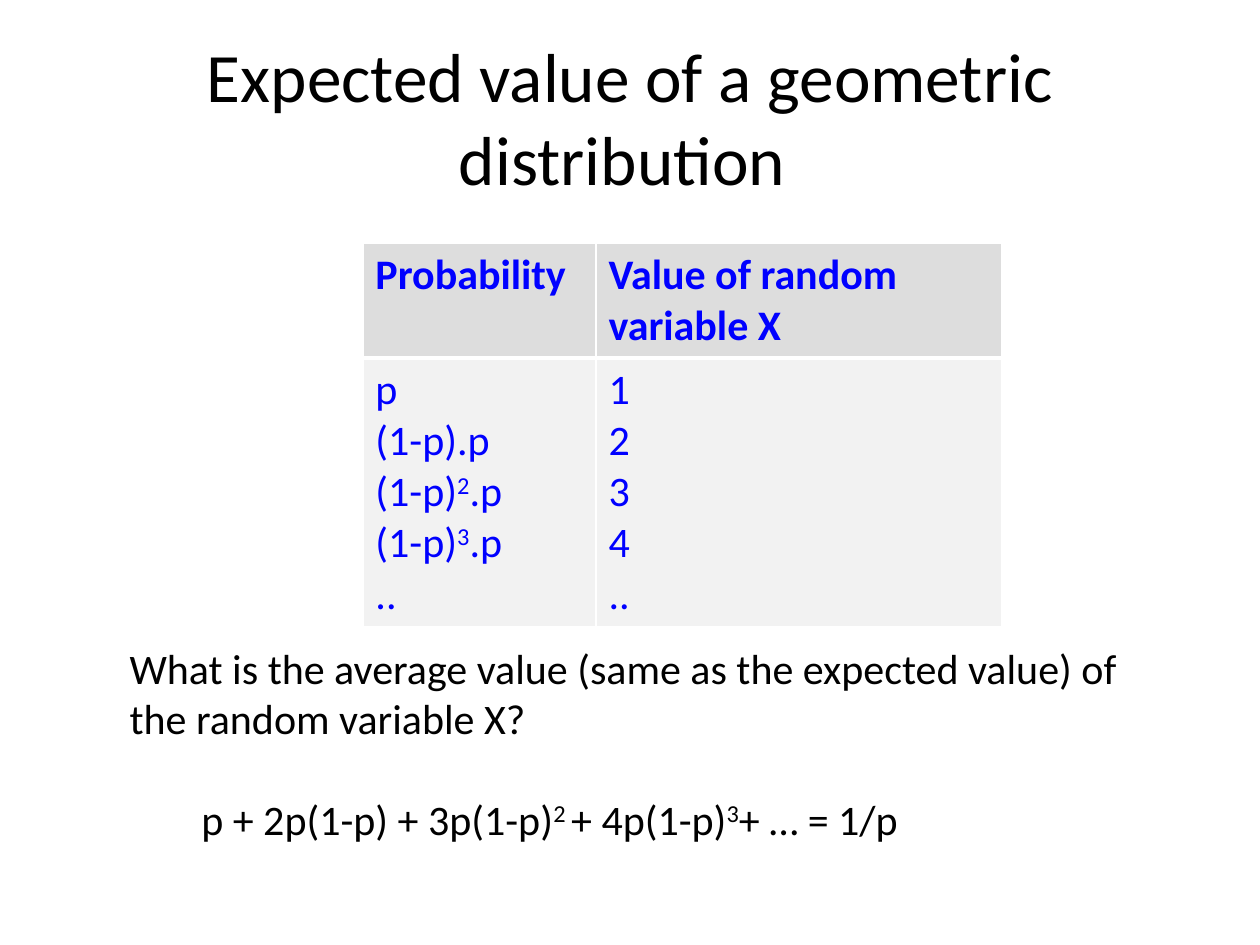
from dataclasses import dataclass
from typing import NamedTuple

from lxml.etree import SubElement
from pptx import Presentation
from pptx.dml.color import RGBColor
from pptx.enum.text import MSO_ANCHOR, PP_ALIGN
from pptx.oxml.ns import qn
from pptx.util import Inches, Pt

SLIDE_WIDTH = Inches(10)
SLIDE_HEIGHT = Inches(7.5)
FONT_NAME = "Calibri"
BODY_SIZE = 24
COLORS = {
    "text": "000000",
    "table_text": "0000FF",
    "header": "DDDDDD",
    "body": "F2F2F2",
    "border": "FFFFFF",
}


class Piece(NamedTuple):
    text: str
    raised: bool = False


class Area(NamedTuple):
    left: float
    top: float
    width: float
    height: float


Line = list[Piece]


@dataclass
class TextBlock:
    area: Area
    lines: list[Line]
    size: float = BODY_SIZE
    alignment: PP_ALIGN = PP_ALIGN.LEFT
    anchor: MSO_ANCHOR = MSO_ANCHOR.TOP
    wrap: bool = True


@dataclass
class TableRow:
    height: float
    cells: list[list[Line]]
    fill: str
    bold: bool
    bottom_border: float


def plain(*texts: str) -> list[Line]:
    return [[Piece(text)] for text in texts]


def power(exponent: str) -> Line:
    return [Piece("(1-p)"), Piece(exponent, True), Piece(".p")]


TEXT_BLOCKS = [
    TextBlock(
        Area(0.05, 0.04, 0.9, 0.1667),
        plain("Expected value of a geometric distribution "),
        size=39.6,
        alignment=PP_ALIGN.CENTER,
        anchor=MSO_ANCHOR.MIDDLE,
    ),
    TextBlock(
        Area(0.093, 0.673, 0.811, 0.121),
        plain(
            "What is the average value (same as the expected value) of",
            "the random variable X?",
        ),
        wrap=False,
    ),
    TextBlock(
        Area(0.15, 0.833, 0.68, 0.067),
        [[
            Piece("p + 2p(1-p) + 3p(1-p)"),
            Piece("2 ", True),
            Piece("+ 4p(1-p)"),
            Piece("3", True),
            Piece("+ … = 1/p"),
        ]],
    ),
]

TABLE_LEFT, TABLE_TOP = 0.288, 0.257
COLUMN_WIDTHS = [0.185, 0.322]
TABLE_ROWS = [
    TableRow(
        0.12,
        [plain("Probability"), plain("Value of random variable X")],
        "header", True, 3,
    ),
    TableRow(
        0.283,
        [
            [*plain("p", "(1-p).p"), power("2"), power("3"), *plain("..")],
            plain("1", "2", "3", "4", ".."),
        ],
        "body", False, 1,
    ),
]


def across(share: float) -> int:
    return round(SLIDE_WIDTH * share)


def down(share: float) -> int:
    return round(SLIDE_HEIGHT * share)


def write_lines(frame, lines: list[Line], size: float, color: str,
                alignment: PP_ALIGN = PP_ALIGN.LEFT, bold: bool = False) -> None:
    for index, line in enumerate(lines):
        paragraph = frame.add_paragraph() if index else frame.paragraphs[0]
        paragraph.alignment = alignment
        for piece in line:
            run = paragraph.add_run()
            run.text = piece.text
            run.font.name = FONT_NAME
            run.font.size = Pt(size)
            run.font.bold = bold
            run.font.color.rgb = RGBColor.from_string(COLORS[color])
            if piece.raised:
                run._r.get_or_add_rPr().set("baseline", "30000")


def draw_text(slide, block: TextBlock) -> None:
    area = block.area
    shape = slide.shapes.add_textbox(
        across(area.left), down(area.top), across(area.width), down(area.height)
    )
    frame = shape.text_frame
    frame.word_wrap = block.wrap
    frame.vertical_anchor = block.anchor
    write_lines(frame, block.lines, block.size, "text", block.alignment)


def draw_borders(cell, top: float, bottom: float) -> None:
    properties = cell._tc.get_or_add_tcPr()
    for side, width in (("L", 1), ("R", 1), ("T", top), ("B", bottom)):
        border = SubElement(properties, qn(f"a:ln{side}"), w=str(Pt(width)))
        fill = SubElement(border, qn("a:solidFill"))
        SubElement(fill, qn("a:srgbClr"), val=COLORS["border"])


def draw_table(slide) -> None:
    table = slide.shapes.add_table(
        len(TABLE_ROWS), len(COLUMN_WIDTHS), across(TABLE_LEFT), down(TABLE_TOP),
        across(sum(COLUMN_WIDTHS)), down(sum(row.height for row in TABLE_ROWS)),
    ).table
    table.horz_banding = False
    for column, width in zip(table.columns, COLUMN_WIDTHS):
        column.width = across(width)
    top_border = 1
    for row, content in zip(table.rows, TABLE_ROWS):
        row.height = down(content.height)
        for cell, lines in zip(row.cells, content.cells):
            draw_borders(cell, top_border, content.bottom_border)
            cell.fill.solid()
            cell.fill.fore_color.rgb = RGBColor.from_string(COLORS[content.fill])
            write_lines(cell.text_frame, lines, BODY_SIZE, "table_text",
                        bold=content.bold)
        top_border = content.bottom_border


def main() -> None:
    presentation = Presentation()
    presentation.slide_width = SLIDE_WIDTH
    presentation.slide_height = SLIDE_HEIGHT
    slide = presentation.slides.add_slide(presentation.slide_layouts[6])
    draw_table(slide)
    for block in TEXT_BLOCKS:
        draw_text(slide, block)
    presentation.save("out.pptx")


if __name__ == "__main__":
    main()
